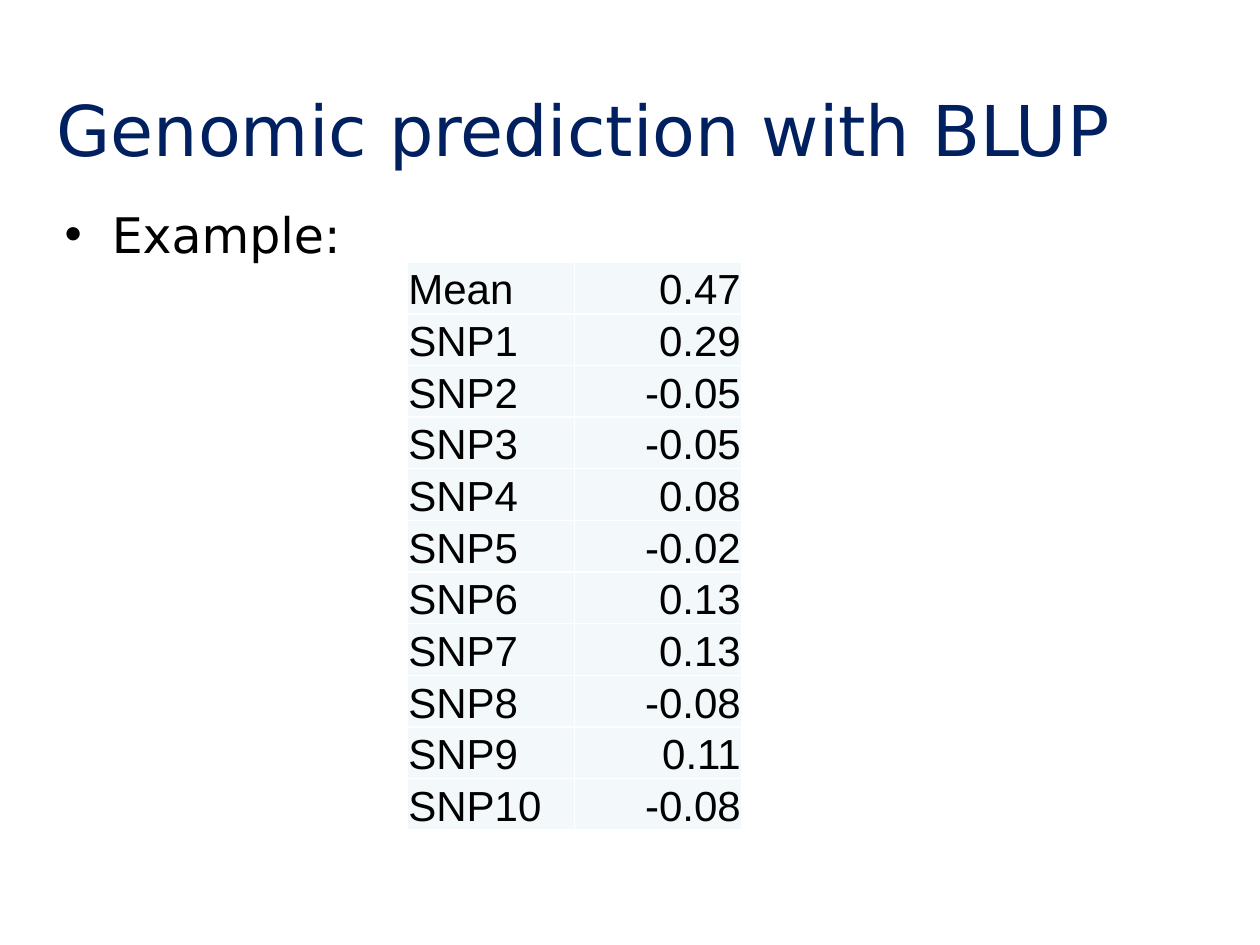
"""Build a slide listing example BLUP effects for genomic prediction."""
import pptx
import pptx.dml.color
import pptx.enum.text
import pptx.oxml
import pptx.oxml.ns
import pptx.util

Pt = pptx.util.Pt
RGBColor = pptx.dml.color.RGBColor
PP_ALIGN = pptx.enum.text.PP_ALIGN
MSO_ANCHOR = pptx.enum.text.MSO_ANCHOR

NAVY = RGBColor(0x00, 0x20, 0x60)
BLACK = RGBColor(0x00, 0x00, 0x00)
WHITE = RGBColor(0xFF, 0xFF, 0xFF)
PALE = RGBColor(0xF3, 0xF9, 0xFA)

EFFECTS = [
    ("Mean", "0.47"),
    ("SNP1", "0.29"),
    ("SNP2", "-0.05"),
    ("SNP3", "-0.05"),
    ("SNP4", "0.08"),
    ("SNP5", "-0.02"),
    ("SNP6", "0.13"),
    ("SNP7", "0.13"),
    ("SNP8", "-0.08"),
    ("SNP9", "0.11"),
    ("SNP10", "-0.08"),
]


class EffectSlide:
    text_font = "DejaVu Sans"
    table_font = "Arial"

    def __init__(self, presentation):
        self.slide = presentation.slides.add_slide(presentation.slide_layouts[1])

    def style(self, paragraph, font_name, size, color, align=PP_ALIGN.LEFT):
        paragraph.alignment = align
        font = paragraph.font
        font.name = font_name
        font.size = Pt(size)
        font.color.rgb = color

    def fill_placeholder(self, index, text, top, height, inset, size, color):
        placeholder = self.slide.placeholders[index]
        placeholder.left, placeholder.top = Pt(25.2), Pt(top)
        placeholder.width, placeholder.height = Pt(674.6), Pt(height)
        frame = placeholder.text_frame
        frame.text = text
        frame.word_wrap = True
        frame.auto_size = pptx.enum.text.MSO_AUTO_SIZE.NONE
        frame.vertical_anchor = MSO_ANCHOR.TOP
        frame.margin_top = Pt(inset)
        paragraph = frame.paragraphs[0]
        paragraph.space_before = Pt(0)
        self.style(paragraph, self.text_font, size, color)
        return paragraph

    def title(self, text):
        self.fill_placeholder(0, text, 43.2, 36, 6.5, 40, NAVY)

    def bullet(self, text):
        paragraph = self.fill_placeholder(1, text, 111.6, 368.6, 5, 28, BLACK)
        properties = paragraph._p.get_or_add_pPr()
        properties.set("marL", str(Pt(31.5)))
        properties.set("indent", str(Pt(-27)))

    def border(self, cell):
        properties = cell._tc.get_or_add_tcPr()
        for side in ("lnL", "lnR", "lnT", "lnB"):
            properties.append(pptx.oxml.parse_xml(
                f'<a:{side} {pptx.oxml.ns.nsdecls("a")} w="{Pt(1)}">'
                f'<a:solidFill><a:srgbClr val="{WHITE}"/></a:solidFill></a:{side}>'))

    def table(self, rows, left, top, column_width, row_height):
        columns = len(rows[0])
        effects = self.slide.shapes.add_table(
            len(rows), columns, Pt(left), Pt(top),
            Pt(column_width * columns), Pt(row_height * len(rows))).table
        effects.first_row = effects.horz_banding = False
        for row_index, row in enumerate(rows):
            effects.rows[row_index].height = Pt(row_height)
            for column_index, text in enumerate(row):
                cell = effects.cell(row_index, column_index)
                cell.text = text
                cell.vertical_anchor = MSO_ANCHOR.BOTTOM
                cell.margin_left = cell.margin_right = cell.margin_top = Pt(0.75)
                cell.margin_bottom = Pt(0)
                self.border(cell)
                cell.fill.solid()
                cell.fill.fore_color.rgb = PALE
                align = PP_ALIGN.RIGHT if column_index else PP_ALIGN.LEFT
                self.style(cell.text_frame.paragraphs[0],
                           self.table_font, 24, BLACK, align)


def main():
    presentation = pptx.Presentation()
    presentation.slide_width, presentation.slide_height = Pt(720), Pt(540)
    slide = EffectSlide(presentation)
    slide.title("Genomic prediction with BLUP")
    slide.bullet("Example:")
    slide.table(EFFECTS, 232.6, 149.8, 95.75, 29.52)
    presentation.save("out.pptx")


if __name__ == "__main__":
    main()
